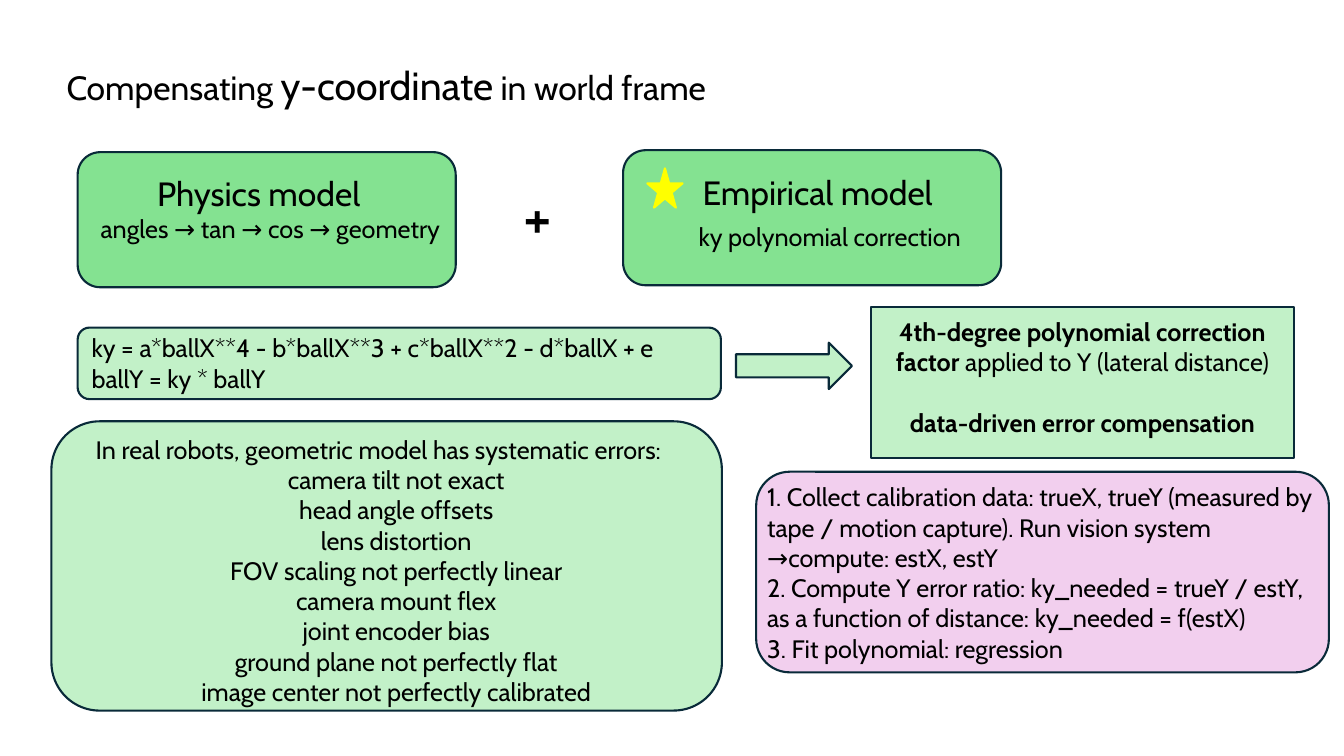
from pptx import Presentation
from pptx.dml.color import RGBColor
from pptx.enum.shapes import MSO_SHAPE
from pptx.enum.text import MSO_ANCHOR, MSO_AUTO_SIZE, PP_ALIGN
from pptx.util import Inches, Pt

ROUNDED = MSO_SHAPE.ROUNDED_RECTANGLE
RECTANGLE = MSO_SHAPE.RECTANGLE
STAR = MSO_SHAPE.STAR_5_POINT
ARROW = MSO_SHAPE.RIGHT_ARROW
LEFT, CENTER = PP_ALIGN.LEFT, PP_ALIGN.CENTER
TOP = MSO_ANCHOR.TOP
NO_AUTOFIT = MSO_AUTO_SIZE.NONE

FONT = "Cabin"
BLACK, NAVY, YELLOW = "000000", "092A39", "FFFF00"
GREEN, PALE_GREEN, PINK = "84E291", "C2F1C8", "F2CFEE"
BODY_SIZE, HEADING_SIZE = 18, 24
LINE_HEIGHT = 21.6

ERROR_SOURCES = [
    "camera tilt not exact",
    "head angle offsets",
    "lens distortion",
    "FOV scaling not perfectly linear",
    "camera mount flex",
    "joint encoder bias",
    "ground plane not perfectly flat",
    "image center not perfectly calibrated",
]
CALIBRATION_STEPS = [
    "1. Collect calibration data: trueX, trueY (measured by tape / motion capture). "
    "Run vision system →compute: estX, estY",
    "2. Compute Y error ratio: ky_needed = trueY / estY, as a function of distance: "
    "ky_needed = f(estX)",
    "3. Fit polynomial: regression",
]


def color(value):
    return RGBColor.from_string(value)


def format_run(run, size=BODY_SIZE, bold=False):
    run.font.name = FONT
    run.font.size = Pt(size)
    run.font.bold = bold
    run.font.color.rgb = color(BLACK)


def add_panel(slide, kind, box, fill, line=NAVY):
    shape = slide.shapes.add_shape(kind, *map(Inches, box))
    shape.shadow.inherit = False
    shape.fill.solid()
    shape.fill.fore_color.rgb = color(fill)
    shape.line.color.rgb = color(line)
    shape.line.width = Pt(1.5)
    return shape


def add_text(slide, box, lines, size=BODY_SIZE, align=LEFT):
    text_frame = slide.shapes.add_textbox(*map(Inches, box)).text_frame
    text_frame.word_wrap = True
    text_frame.text = "\n".join(lines)
    for paragraph in text_frame.paragraphs:
        paragraph.alignment = align
        for run in paragraph.runs:
            format_run(run, size)
    return text_frame


def add_title(slide, box):
    title = slide.shapes.title
    title.left, title.top, title.width, title.height = map(Inches, box)
    text_frame = title.text_frame
    text_frame.auto_size = NO_AUTOFIT
    text_frame.vertical_anchor = TOP
    paragraph = text_frame.paragraphs[0]
    paragraph.alignment = LEFT
    for text, size in [("Compensating ", HEADING_SIZE), ("y-coordinate", 28),
                       (" in world frame", HEADING_SIZE)]:
        run = paragraph.add_run()
        run.text = text
        format_run(run, size)


def add_model(slide, box, heading, heading_offset, detail, detail_offset):
    left, top, _, _ = box
    add_panel(slide, ROUNDED, box, GREEN)
    for text, (right, down), height, size in [
            (heading, heading_offset, 0.5, HEADING_SIZE),
            (detail, detail_offset, 0.4, BODY_SIZE)]:
        add_text(slide, (left + right, top + down, 3.6, height), [text], size)


def add_models(slide, box):
    left, top, width, height = box
    card_width, card_height = 3.75, 1.34
    add_model(slide, (left, top + 0.02, card_width, card_height),
              "Physics model", (0.69, 0.16),
              "angles → tan → cos → geometry", (0.13, 0.56))
    empirical_left = left + width - card_width
    add_model(slide, (empirical_left, top, card_width, card_height),
              "Empirical model", (0.69, 0.17),
              "ky polynomial correction", (0.65, 0.66))
    add_panel(slide, STAR, (empirical_left + 0.24, top + 0.18, 0.35, 0.39),
              YELLOW, YELLOW)
    add_text(slide, (left + 4.32, top + 0.23, 0.62, 0.84), ["+"], 44)


def add_formula(slide, box):
    left, top, width, height = box
    add_panel(slide, ROUNDED, box, PALE_GREEN)
    add_text(slide, (left + 0.04, top, width, height), [
        "ky = a*ballX**4 - b*ballX**3 + c*ballX**2 - d*ballX + e",
        "ballY = ky * ballY",
    ])
    # Arrow towards the explanation
    add_panel(slide, ARROW, (left + width + 0.15, top + 0.15, 1.15, 0.46), PALE_GREEN)


def add_explanation(slide, box):
    left, top, width, height = box
    add_panel(slide, RECTANGLE, box, PALE_GREEN)
    text_frame = add_text(slide, (left, top + 0.04, width, height), [
        "4th-degree polynomial correction factor",
        "data-driven error compensation",
    ], align=CENTER)
    factor, compensation = text_frame.paragraphs
    for paragraph in (factor, compensation):
        paragraph.runs[0].font.bold = True
    run = factor.add_run()
    run.text = " applied to Y (lateral distance)"
    format_run(run)
    compensation.space_before = Pt(LINE_HEIGHT)


def add_errors(slide, box):
    left, top, width, height = box
    add_panel(slide, ROUNDED, box, PALE_GREEN)
    text_frame = add_text(
        slide, (left + 0.34, top + 0.08, 6.16, height),
        ["In real robots, geometric model has systematic errors:"] + ERROR_SOURCES,
        align=CENTER)
    text_frame.paragraphs[0].alignment = LEFT


def add_calibration(slide, box):
    left, top, width, height = box
    add_panel(slide, ROUNDED, box, PINK)
    add_text(slide, (left + 0.01, top + 0.05, width, height), CALIBRATION_STEPS)


def main():
    presentation = Presentation()
    presentation.slide_width = Inches(13.33)
    presentation.slide_height = Inches(7.5)
    title_only = presentation.slide_layouts[5]
    slide = presentation.slides.add_slide(title_only)

    add_title(slide, (0.56, 0.56, 7.32, 0.57))
    add_models(slide, (0.77, 1.49, 9.16, 1.36))
    add_formula(slide, (0.77, 3.25, 6.38, 0.71))
    add_explanation(slide, (8.64, 3.05, 4.19, 1.49))
    add_errors(slide, (0.51, 4.18, 6.65, 2.87))
    add_calibration(slide, (7.5, 4.68, 5.68, 1.99))

    presentation.save("out.pptx")


if __name__ == "__main__":
    main()
